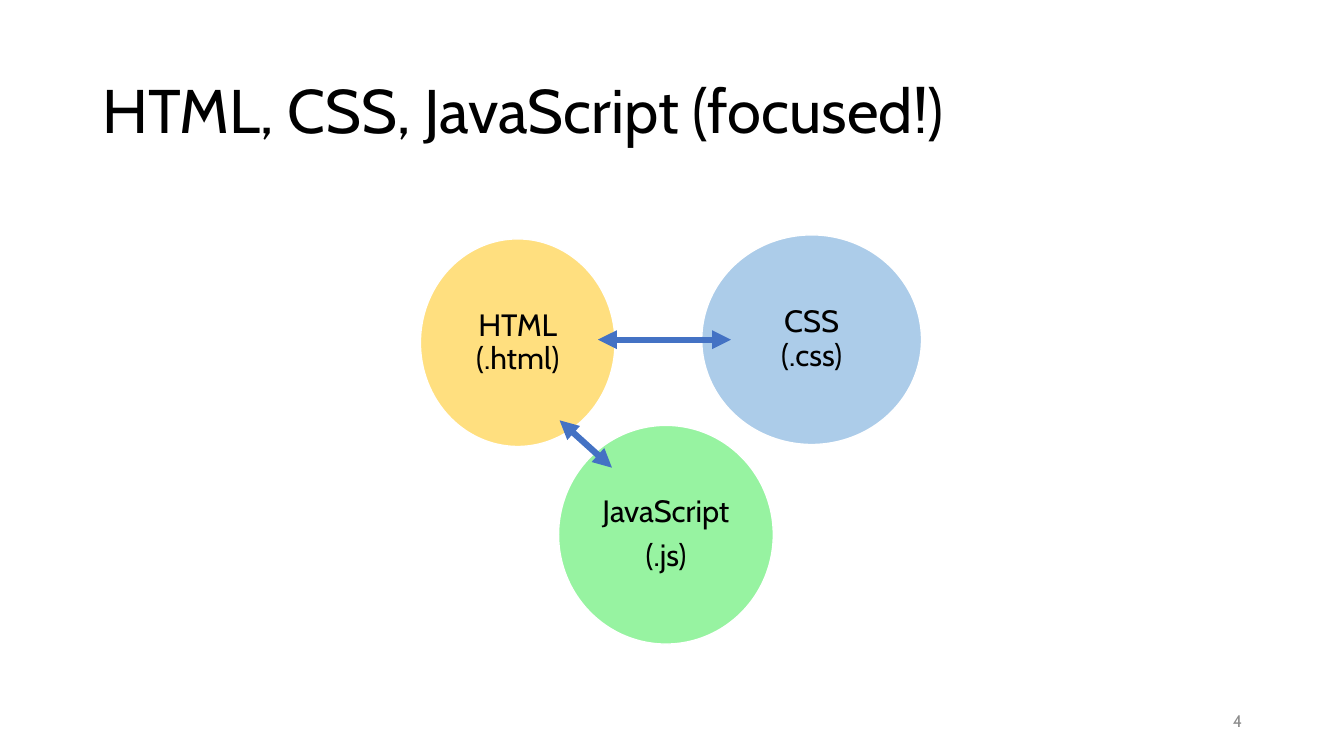
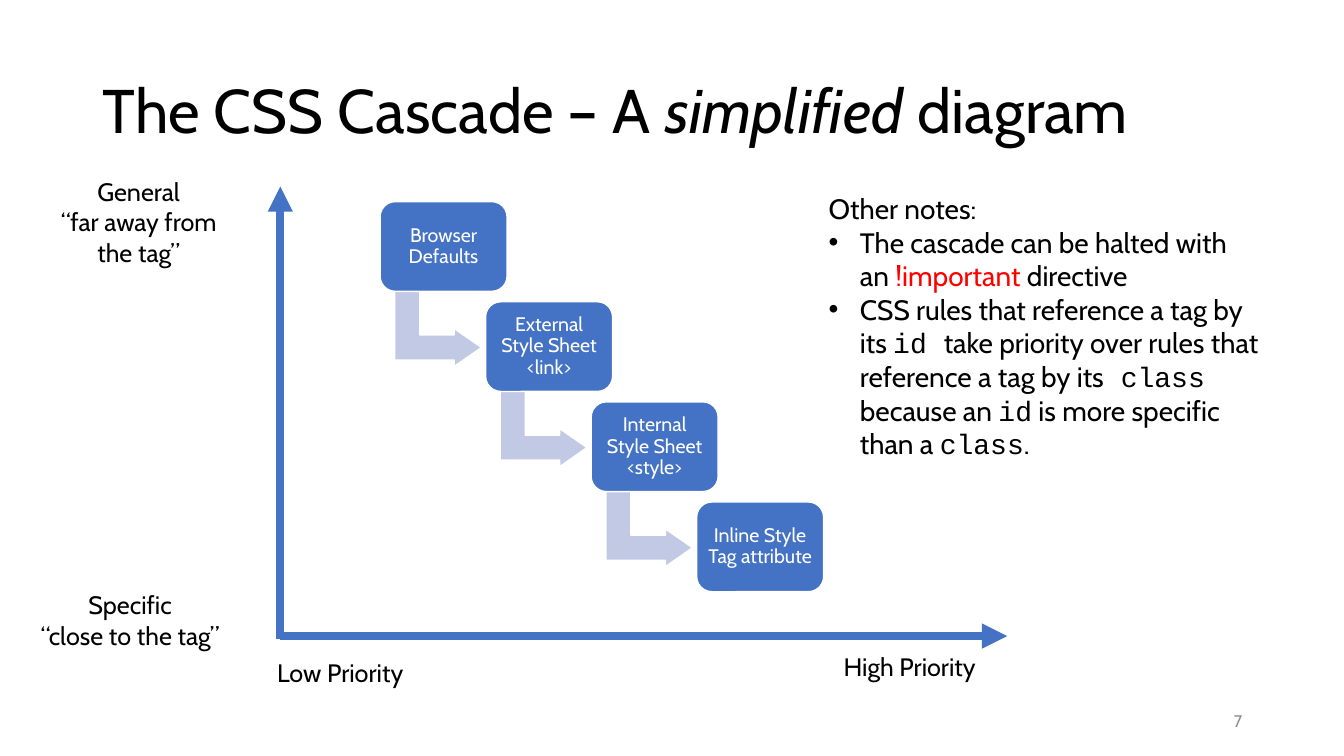
from dataclasses import dataclass
from typing import Optional

from lxml import etree
from pptx import Presentation
from pptx.dml import color as dml
from pptx.enum import shapes, text
from pptx.oxml import ns
from pptx.util import Inches, Pt

# Shared style
FONT, CODE_FONT = "Cabin", "Courier New"
BLACK, WHITE, RED, GREY = "000000", "FFFFFF", "FF0000", "8C8C8C"
BLUE, PALE_BLUE = "4472C4", "C1C9E4"
LEFT, CENTER, RIGHT = text.PP_ALIGN.LEFT, text.PP_ALIGN.CENTER, text.PP_ALIGN.RIGHT
TOP, MIDDLE = text.MSO_ANCHOR.TOP, text.MSO_ANCHOR.MIDDLE


@dataclass(frozen=True)
class Run:
    text: str
    font: str = FONT
    color: Optional[str] = None
    italic: bool = False


@dataclass(frozen=True)
class Paragraph:
    runs: tuple
    bullet: bool = False


@dataclass(frozen=True)
class Box:
    left: float
    top: float
    width: float
    height: float

    def lengths(self) -> tuple:
        return tuple(Inches(v) for v in (self.left, self.top, self.width, self.height))


@dataclass(frozen=True)
class Circle:
    lines: tuple
    box: Box
    color: str


@dataclass(frozen=True)
class Arrow:
    start: tuple
    end: tuple
    width: float
    both_ends: bool = False


@dataclass(frozen=True)
class Label:
    text: str
    box: Box
    align: int = CENTER


def rgb(value: str) -> dml.RGBColor:
    return dml.RGBColor.from_string(value)


def plain(*lines: str) -> list:
    return [Paragraph((Run(line),)) for line in lines]


def add_child(parent, tag: str, **attributes):
    return etree.SubElement(parent, ns.qn(tag), attributes)


# Text
def add_bullet(paragraph, indent: float = 0.31) -> None:
    properties = paragraph._p.get_or_add_pPr()
    properties.set("marL", str(Inches(indent)))
    properties.set("indent", str(-Inches(indent)))
    add_child(properties, "a:buFont", typeface="Arial")
    add_child(properties, "a:buChar", char="•")


def write_text(frame, paragraphs: list, *, size: float, color: str = BLACK,
               align=LEFT, anchor=TOP, spacing: float = 1.0, after: float = 0,
               inset: Optional[float] = None) -> None:
    frame.word_wrap = True
    frame.vertical_anchor = anchor
    if inset is not None:
        frame.margin_left = frame.margin_right = Inches(inset)
        frame.margin_top = frame.margin_bottom = Inches(inset)
    for index, content in enumerate(paragraphs):
        paragraph = frame.add_paragraph() if index else frame.paragraphs[0]
        paragraph.alignment = align
        paragraph.line_spacing = spacing
        paragraph.space_after = Pt(after)
        if content.bullet:
            add_bullet(paragraph)
        for part in content.runs:
            for number, line in enumerate(part.text.split("\n")):
                if number:
                    paragraph.add_line_break()
                run = paragraph.add_run()
                run.text = line
                run.font.name = part.font
                run.font.size = Pt(size)
                run.font.italic = part.italic
                run.font.color.rgb = rgb(part.color or color)


def add_text(slide, box: Box, paragraphs: list, **style) -> None:
    write_text(slide.shapes.add_textbox(*box.lengths()).text_frame, paragraphs, **style)


# Shapes and arrows
def add_shape(slide, kind, box: Box, fill: str, alpha: Optional[int] = None,
              adjustments: tuple = ()):
    shape = slide.shapes.add_shape(kind, *box.lengths())
    shape.shadow.inherit = False
    shape.fill.solid()
    shape.fill.fore_color.rgb = rgb(fill)
    shape.line.color.rgb = rgb(WHITE)
    shape.line.width = Pt(1)
    for index, value in enumerate(adjustments):
        shape.adjustments[index] = value
    if alpha is not None:
        fill_color = shape._element.spPr.find(ns.qn("a:solidFill"))[0]
        add_child(fill_color, "a:alpha", val=str(alpha * 1000))
    return shape


def add_arrow(slide, arrow: Arrow) -> None:
    points = [Inches(v) for v in arrow.start + arrow.end]
    connector = slide.shapes.add_connector(shapes.MSO_CONNECTOR.STRAIGHT, *points)
    connector.line.color.rgb = rgb(BLUE)
    connector.line.width = Pt(arrow.width)
    line = connector.line._get_or_add_ln()
    if arrow.both_ends:
        add_child(line, "a:headEnd", type="triangle")
    add_child(line, "a:tailEnd", type="triangle")
    add_child(connector._element.spPr, "a:effectLst")


def add_slide(presentation, number: int, *title: Run):
    slide = presentation.slides.add_slide(presentation.slide_layouts[6])
    add_text(slide, Box(0.92, 0.4, 11.5, 1.45), [Paragraph(title)],
             size=44, anchor=MIDDLE, spacing=0.9)
    add_text(slide, Box(9.42, 6.95, 3, 0.4), plain(str(number)),
             size=12, color=GREY, align=RIGHT, anchor=MIDDLE)
    return slide


# Slide: three languages
CIRCLES = (
    Circle(("HTML\n(.html)",), Box(4.17, 2.37, 1.93, 2.06), "FFC000"),
    Circle(("JavaScript", "(.js)"), Box(5.54, 4.22, 2.13, 2.17), "30E845"),
    Circle(("CSS\n(.css)",), Box(6.96, 2.33, 2.18, 2.08), "5B9BD5"),
)
LINKS = (
    Arrow((5.93, 3.37), (7.25, 3.37), 4.5, both_ends=True),
    Arrow((5.55, 4.17), (6.07, 4.64), 4.5, both_ends=True),
)


def build_languages(presentation) -> None:
    slide = add_slide(presentation, 4, Run("HTML, CSS, JavaScript (focused!)"))
    for circle in CIRCLES:
        shape = add_shape(slide, shapes.MSO_SHAPE.OVAL, circle.box, circle.color, alpha=50)
        write_text(shape.text_frame, plain(*circle.lines), size=22, align=CENTER,
                   anchor=MIDDLE, spacing=0.9, after=7.7, inset=0.09)
    for link in LINKS:
        add_arrow(slide, link)


# Slide: the cascade
STEPS = (
    "Browser\nDefaults",
    "External Style Sheet\n<link>",
    "Internal Style Sheet\n<style>",
    "Inline Style\nTag attribute",
)
STEP_X, STEP_Y = 3.14 / 3, 2.98 / 3
AXES = (
    Arrow((2.78, 6.31), (9.99, 6.31), 6),
    Arrow((2.78, 6.34), (2.78, 1.85), 6),
)
AXIS_LABELS = (
    Label("General\n“far away from the tag”", Box(0.37, 1.7, 2.01, 1.01)),
    Label("Specific\n“close to the tag”", Box(0.09, 5.8, 2.4, 0.71)),
    Label("Low Priority", Box(2.65, 6.47, 1.7, 0.4), LEFT),
    Label("High Priority", Box(8.27, 6.41, 1.7, 0.4), LEFT),
)
NOTES = [
    Paragraph((Run("Other notes:"),)),
    Paragraph((
        Run("The cascade can be halted with an "),
        Run("!important", color=RED),
        Run(" directive"),
    ), bullet=True),
    Paragraph((
        Run("CSS rules that reference a tag by its "),
        Run("id ", CODE_FONT),
        Run("take priority over rules that reference a tag by its"),
        Run(" class ", CODE_FONT),
        Run("because an "),
        Run("id", CODE_FONT),
        Run(" is more specific than a "),
        Run("class", CODE_FONT),
        Run("."),
    ), bullet=True),
]


def build_cascade(presentation) -> None:
    slide = add_slide(presentation, 7, Run("The CSS Cascade – A "),
                      Run("simplified", italic=True), Run(" diagram"))
    for index, step in enumerate(STEPS):
        across, down = index * STEP_X, index * STEP_Y
        if index < len(STEPS) - 1:
            bend = add_shape(slide, shapes.MSO_SHAPE.BENT_UP_ARROW,
                             Box(3.97 + across, 2.83 + down, 0.75, 0.86),
                             PALE_BLUE, adjustments=(0.33, 0.25, 0.36))
            bend.rotation = 90
        card = add_shape(slide, shapes.MSO_SHAPE.ROUNDED_RECTANGLE,
                         Box(3.77 + across, 2 + down, 1.26, 0.89),
                         BLUE, adjustments=(0.17,))
        write_text(card.text_frame, plain(step), size=14, color=WHITE, align=CENTER,
                   anchor=MIDDLE, spacing=0.9, after=4.9, inset=0.06)
    for axis in AXES:
        add_arrow(slide, axis)
    for label in AXIS_LABELS:
        add_text(slide, label.box, plain(label.text), size=18, align=label.align)
    add_text(slide, Box(8.12, 1.85, 4.59, 2.79), NOTES, size=20)


def main() -> None:
    presentation = Presentation()
    presentation.slide_width, presentation.slide_height = Inches(13.33), Inches(7.5)
    build_languages(presentation)
    build_cascade(presentation)
    presentation.save("out.pptx")


if __name__ == "__main__":
    main()
